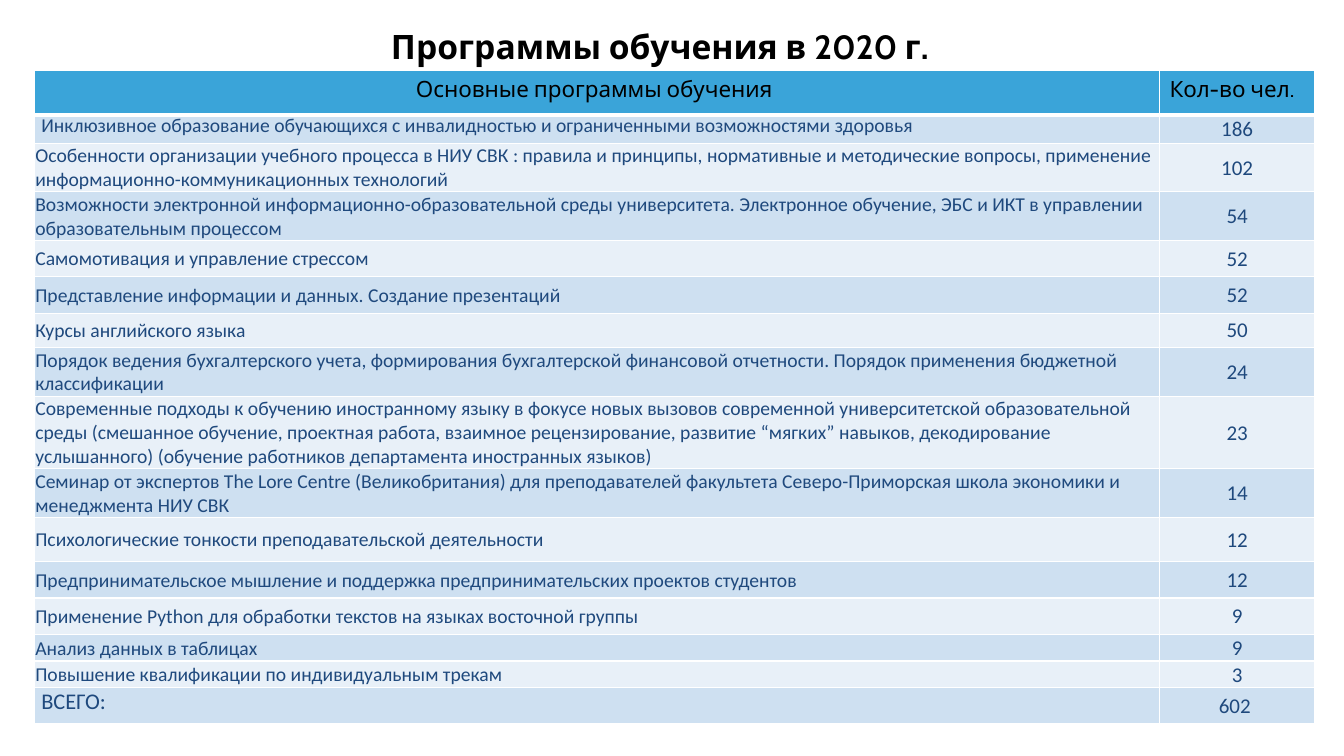
from lxml import etree
from pptx import Presentation
from pptx.dml.color import RGBColor
from pptx.enum.text import MSO_ANCHOR, MSO_AUTO_SIZE, PP_ALIGN
from pptx.oxml.ns import qn
from pptx.util import Inches, Pt

LEFT, CENTER = PP_ALIGN.LEFT, PP_ALIGN.CENTER
TOP, MIDDLE, BOTTOM = MSO_ANCHOR.TOP, MSO_ANCHOR.MIDDLE, MSO_ANCHOR.BOTTOM
NO_AUTOFIT = MSO_AUTO_SIZE.NONE
TITLE_ONLY = 5

COLORS = {
    "black": "000000",
    "navy": "1F497D",
    "header": "3AA4D9",
    "band_dark": "CEE0F1",
    "band_light": "E8F0F8",
    "border": "FFFFFF",
}
HEADING_FONT, BODY_FONT = "Cabin", "Calibri"

# Cell insets: left, top, right, bottom
HEADER_INSETS = (0.1, 0.05, 0.1, 0.05)
WIDE_INSETS = (0.07, 0, 0.07, 0)
TIGHT_INSETS = (0.01, 0.01, 0.01, 0)

HEADERS = ("Основные программы обучения ", "Кол-во чел.")
HEADER_HEIGHT = 0.44
COLUMN_WIDTHS = (11.16, 1.54)

# Programme, number of people, row height, vertical anchor
PROGRAMMES = [
    ("Инклюзивное образование обучающихся с инвалидностью и ограниченными "
     "возможностями здоровья", "186", 0.28, MIDDLE),
    ("Особенности организации учебного процесса в НИУ СВК : правила и принципы, "
     "нормативные и методические вопросы, применение "
     "информационно-коммуникационных технологий", "102", 0.44, MIDDLE),
    ("Возможности электронной информационно-образовательной среды университета. "
     "Электронное обучение, ЭБС и ИКТ в управлении образовательным процессом",
     "54", 0.48, BOTTOM),
    ("Самомотивация и управление стрессом", "52", 0.36, MIDDLE),
    ("Представление информации и данных. Создание презентаций", "52", 0.36, MIDDLE),
    ("Курсы английского языка", "50", 0.34, MIDDLE),
    ("Порядок ведения бухгалтерского учета, формирования бухгалтерской финансовой "
     "отчетности. Порядок применения бюджетной классификации", "24", 0.36, MIDDLE),
    ("Современные подходы к обучению иностранному языку в фокусе новых вызовов "
     "современной университетской образовательной среды (смешанное обучение, "
     "проектная работа, взаимное рецензирование, развитие “мягких” навыков, "
     "декодирование услышанного) (обучение работников департамента иностранных "
     "языков)", "23", 0.45, BOTTOM),
    ("Семинар от экспертов The Lore Centre (Великобритания) для преподавателей "
     "факультета Северо-Приморская школа экономики и менеджмента НИУ СВК",
     "14", 0.36, MIDDLE),
    ("Психологические тонкости преподавательской деятельности", "12", 0.44, MIDDLE),
    ("Предпринимательское мышление и поддержка предпринимательских проектов "
     "студентов", "12", 0.36, MIDDLE),
    ("Применение Python для обработки текстов на языках восточной группы",
     "9", 0.36, MIDDLE),
    ("Анализ данных в таблицах", "9", 0.26, BOTTOM),
    ("Повышение квалификации по индивидуальным трекам", "3", 0.23, MIDDLE),
    ("ВСЕГО:", "602 ", 0.36, MIDDLE),
]


def color(name):
    return RGBColor.from_string(COLORS[name])


def format_text(frame, text, font, size, ink, align, bold=False):
    frame.text = text
    paragraph = frame.paragraphs[0]
    paragraph.alignment = align
    for run in paragraph.runs:
        run.font.name = font
        run.font.size = Pt(size)
        run.font.bold = bold
        run.font.color.rgb = color(ink)
    return paragraph


def add_borders(cell, bottom_width):
    properties = cell._tc.get_or_add_tcPr()
    for side, width in (("L", 1), ("R", 1), ("T", 1), ("B", bottom_width)):
        line = etree.SubElement(properties, qn(f"a:ln{side}"), w=str(Pt(width)))
        fill = etree.SubElement(line, qn("a:solidFill"))
        etree.SubElement(fill, qn("a:srgbClr"), val=COLORS["border"])


def style_cell(cell, fill, anchor, insets, bottom_width=1):
    add_borders(cell, bottom_width)
    cell.fill.solid()
    cell.fill.fore_color.rgb = color(fill)
    cell.vertical_anchor = anchor
    (cell.margin_left, cell.margin_top,
     cell.margin_right, cell.margin_bottom) = map(Inches, insets)


def add_title(slide, text):
    title = slide.shapes.title
    title.left, title.top = Inches(2.61), Inches(0.21)
    title.width, title.height = Inches(7.87), Inches(0.63)
    frame = title.text_frame
    frame.auto_size = NO_AUTOFIT
    frame.vertical_anchor = TOP
    format_text(frame, text, HEADING_FONT, 24, "black", CENTER, bold=True)


def fill_header(table):
    table.rows[0].height = Inches(HEADER_HEIGHT)
    for cell, text, align in zip(table.rows[0].cells, HEADERS, (CENTER, LEFT)):
        style_cell(cell, "header", TOP, HEADER_INSETS, bottom_width=3)
        format_text(cell.text_frame, text, HEADING_FONT, 16, "black", align)


def fill_programme(table, number, programme, people, height, anchor):
    table.rows[number].height = Inches(height)
    is_total = number == len(PROGRAMMES)
    is_edge = is_total or number == 1
    insets = WIDE_INSETS if is_edge else TIGHT_INSETS
    band = "band_dark" if number % 2 else "band_light"
    name_cell, people_cell = table.rows[number].cells

    style_cell(name_cell, band, anchor, insets)
    name = format_text(name_cell.text_frame, programme, BODY_FONT,
                       16 if is_total else 14, "navy", LEFT)
    if is_edge:
        name.line_spacing = Pt(13)

    style_cell(people_cell, band, MIDDLE, insets)
    format_text(people_cell.text_frame, people, BODY_FONT, 15, "navy", CENTER)


def add_programme_table(slide):
    heights = [HEADER_HEIGHT] + [row[2] for row in PROGRAMMES]
    table = slide.shapes.add_table(
        len(heights), len(COLUMN_WIDTHS), Inches(0.34), Inches(0.7),
        Inches(sum(COLUMN_WIDTHS)), Inches(sum(heights))).table
    for column, width in zip(table.columns, COLUMN_WIDTHS):
        column.width = Inches(width)
    fill_header(table)
    for number, programme_row in enumerate(PROGRAMMES, start=1):
        fill_programme(table, number, *programme_row)


def main():
    presentation = Presentation()
    presentation.slide_width = Inches(13.33)
    presentation.slide_height = Inches(7.5)
    slide = presentation.slides.add_slide(presentation.slide_layouts[TITLE_ONLY])

    # Heading
    add_title(slide, "Программы обучения в 2020 г.")

    # Programmes with the number of people trained
    add_programme_table(slide)

    presentation.save("out.pptx")


if __name__ == "__main__":
    main()
